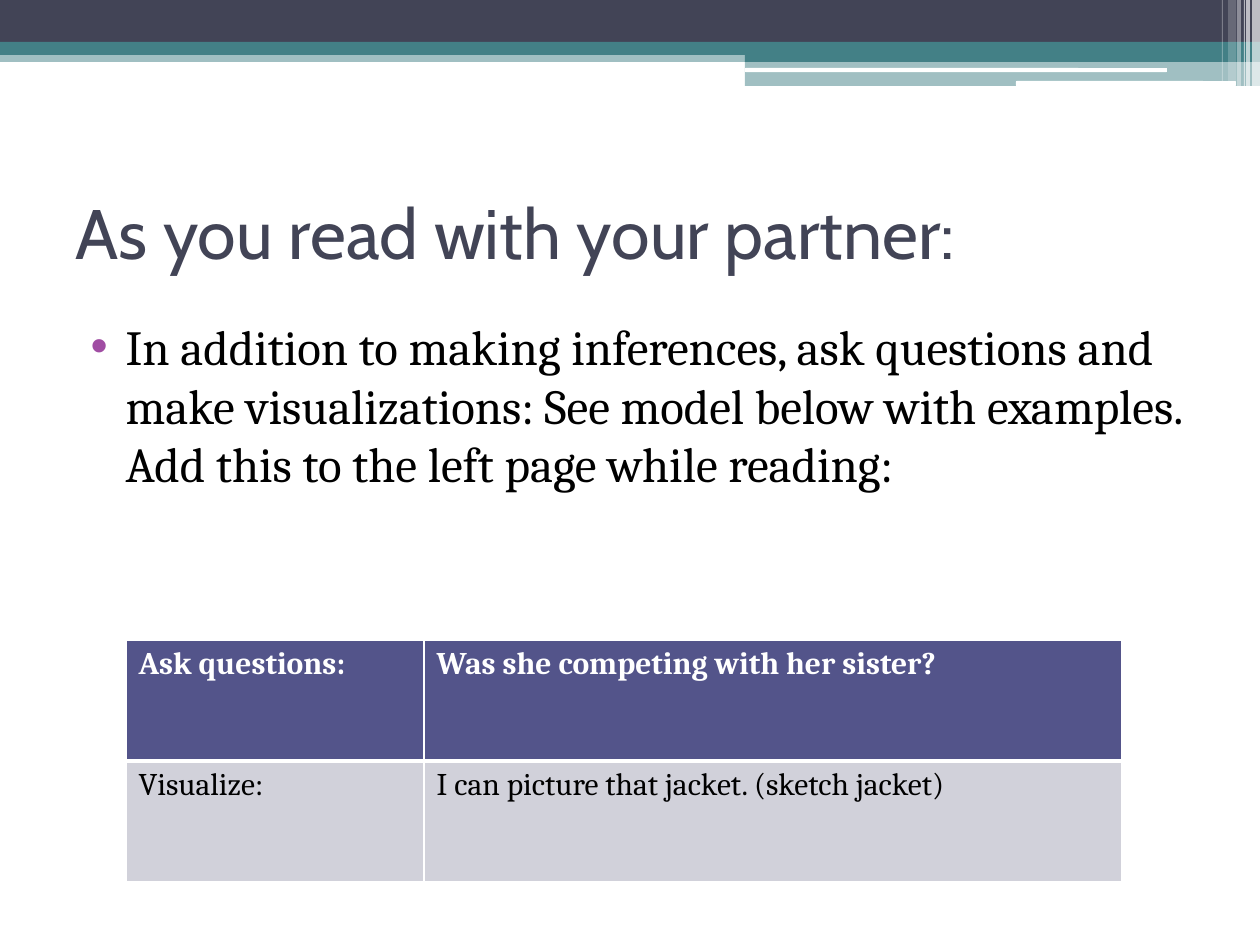
from lxml.etree import SubElement as Sub
from pptx import Presentation
from pptx.dml.color import RGBColor
from pptx.enum.shapes import MSO_SHAPE as Shape
from pptx.enum.text import MSO_ANCHOR as Anchor, MSO_AUTO_SIZE as Fit, PP_ALIGN as Align
from pptx.oxml import parse_xml
from pptx.oxml.ns import nsdecls, qn
from pptx.util import Pt

SCALE = 914400 / 126
DARK, TEAL, WHITE, BLACK = "424456", "438086", "FFFFFF", "000000"
HEAD, PALE, DOT = "53548A", "D1D1DA", "A04DA3"

BANDS = [
    (0, 50, 1260, 12, TEAL, 50),
    (0, 0, 1260, 43, DARK, 100),
    (0, 42, 1260, 13, TEAL, 100),
    (745, 49, 515, 13, TEAL, 100),
    (745, 61, 515, 25, TEAL, 50),
]
BARS = [(745, 68, 422, 4), (1016, 81, 220, 5)]
STRIPES = [
    (1252, 8, 86, 65),
    (1246, 4, 86, 65),
    (1244, 1, 86, 60),
    (1237, 4, 86, 40),
    (1228, 8, 81, 20),
    (1222, 1, 81, 30),
]
ROWS = [
    ("Ask questions:", "Was she competing with her sister?"),
    ("Visualize:", "I can picture that jacket. (sketch jacket)"),
]
COLS = [298, 698]


def px(*vals):
    """Turn px lengths into EMU."""
    return [round(v * SCALE) for v in vals]


def paint(color, hue):
    """Give a colour format a hex hue."""
    color.rgb = RGBColor.from_string(hue)


def fill(item, hue):
    """Fill a shape or cell with a solid hue."""
    item.fill.solid()
    paint(item.fill.fore_color, hue)


def style(para, face, size, hue, bold=False):
    """Set the font of a paragraph."""
    font = para.font
    font.name, font.size, font.bold = face, Pt(size), bold
    paint(font.color, hue)


def block(slide, box, hue, alpha=100, kind=Shape.RECTANGLE):
    """Draw a borderless block, see-through when alpha is under 100."""
    shape = slide.shapes.add_shape(kind, *px(*box))
    shape.shadow.inherit = False
    shape.line.fill.background()
    fill(shape, hue)
    if alpha < 100:
        tone = shape.fill._xPr.find(qn("a:solidFill"))[0]
        Sub(tone, qn("a:alpha"), val=str(alpha * 1000))


def place(holder, box, text):
    """Move a placeholder, set its text and return the paragraph."""
    holder.left, holder.top, holder.width, holder.height = px(*box)
    frame = holder.text_frame
    frame.text = text
    frame.auto_size = Fit.NONE
    para = frame.paragraphs[0]
    para.alignment = Align.LEFT
    return para


def bullet(para, hue, left, hang):
    """Give a paragraph a coloured bullet with a hanging indent."""
    props = para._p.get_or_add_pPr()
    left, hang = px(left, hang)
    props.set("marL", str(left))
    props.set("indent", str(-hang))
    tint = Sub(props, qn("a:buClr"))
    Sub(tint, qn("a:srgbClr"), val=hue)
    Sub(props, qn("a:buFont"), typeface="Arial")
    Sub(props, qn("a:buChar"), char="•")


def edge(cell, top, base):
    """Draw white cell borders with the given top and base widths."""
    props = cell._tc.get_or_add_tcPr()
    for spot, (side, width) in enumerate(zip("LRTB", (1, 1, top, base))):
        props.insert(spot, parse_xml(
            f'<a:ln{side} {nsdecls("a")} w="{Pt(width)}"><a:solidFill>'
            f'<a:srgbClr val="{WHITE}"/></a:solidFill></a:ln{side}>'))


def grid(slide, left, top, high):
    """Add the table of reading prompts."""
    size = px(left, top, sum(COLS), high * len(ROWS))
    table = slide.shapes.add_table(len(ROWS), len(COLS), *size).table
    for col, wide in zip(table.columns, px(*COLS)):
        col.width = wide
    for r, row in enumerate(ROWS):
        first = r == 0
        table.rows[r].height = px(high)[0]
        for c, text in enumerate(row):
            cell = table.cell(r, c)
            cell.text = text
            fill(cell, HEAD if first else PALE)
            style(cell.text_frame.paragraphs[0], "Cambria", 18,
                  WHITE if first else BLACK, first)
            edge(cell, *((1, 3) if first else (3, 1)))


def main():
    """Build and save the slide."""
    deck = Presentation()
    deck.slide_width, deck.slide_height = px(1260, 945)
    slide = deck.slides.add_slide(deck.slide_layouts[1])
    for *box, hue, alpha in BANDS:
        block(slide, box, hue, alpha)
    for box in BARS:
        block(slide, box, WHITE, kind=Shape.ROUNDED_RECTANGLE)
    for left, wide, high, alpha in STRIPES:
        block(slide, (left, 0, wide, high), WHITE, alpha)

    title, body = slide.placeholders
    para = place(title, (63, 158, 1134, 147), "As you read with your partner:")
    title.text_frame.vertical_anchor = Anchor.MIDDLE
    style(para, "Cabin", 40, DARK)

    para = place(body, (63, 310, 1134, 596),
                 "In addition to making inferences, ask questions and make "
                 "visualizations: See model below with examples. Add this to "
                 "the left page while reading:")
    para.space_before = Pt(3)
    style(para, "Cambria", 28, BLACK)
    bullet(para, DOT, 50, 35)

    grid(slide, 126, 640, 121)
    deck.save("out.pptx")


if __name__ == "__main__":
    main()
